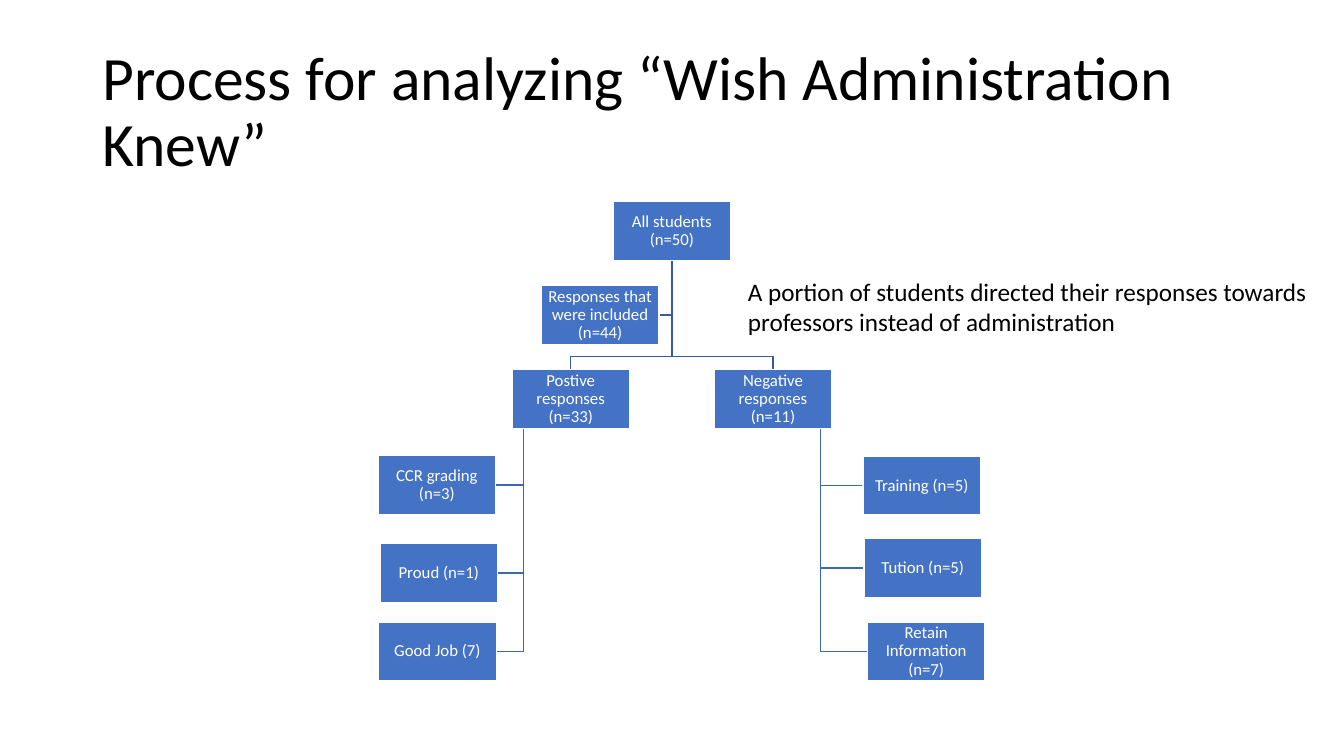
"""Build the slide on analysing the "Wish Administration Knew" responses."""
from pptx import Presentation
from pptx.dml.color import RGBColor
from pptx.enum.shapes import MSO_SHAPE
from pptx.enum.text import MSO_ANCHOR, PP_ALIGN
from pptx.util import Pt

COLORS = {"box": "4472C4", "edge": "FFFFFF", "stem": "365B9D",
          "branch": "3E67B2", "ink": "000000", "paper": "FFFFFF"}
FONT = "Calibri"
BOX_W, BOX_H = 84.2, 42.2
RAIL_INSET = BOX_W / 10
DROP = 9.2

ROOT = (437.9, 144, "All students (n=50)")
INCLUDED = (386.6, 204, "Responses that were included (n=44)")
POSITIVE = (365.6, 264, "Postive responses (n=33)")
NEGATIVE = (510.1, 264, "Negative responses (n=11)")
POSITIVE_THEMES = [(270, 325.4, "CCR grading (n=3)"),
                   (271.4, 388.1, "Proud (n=1)"),
                   (270.4, 444.2, "Good Job (7)")]
NEGATIVE_THEMES = [(616.4, 325.8, "Training (n=5)"),
                   (617.1, 384.7, "Tution (n=5)"),
                   (619.5, 444.2, "Retain Information (n=7)")]


class SlideBuilder:
    def __init__(self, slide):
        self.slide = slide

    def color(self, name):
        return RGBColor.from_string(COLORS[name])

    def add_words(self, sp, text, size, color, spacing=None,
                  align=PP_ALIGN.LEFT, anchor=MSO_ANCHOR.TOP):
        tf = sp.text_frame
        tf.word_wrap = True
        tf.vertical_anchor = anchor
        p = tf.paragraphs[0]
        p.alignment = align
        p.line_spacing = spacing
        r = p.add_run()
        r.text = text
        r.font.name = FONT
        r.font.size = Pt(size)
        r.font.color.rgb = self.color(color)
        return tf

    def text(self, x, y, w, h, text, size, **style):
        sp = self.slide.shapes.add_textbox(Pt(x), Pt(y), Pt(w), Pt(h))
        self.add_words(sp, text, size, "ink", **style)

    def box(self, x, y, text):
        sp = self.slide.shapes.add_shape(MSO_SHAPE.RECTANGLE, Pt(x), Pt(y),
                                         Pt(BOX_W), Pt(BOX_H))
        sp.shadow.inherit = False
        sp.fill.solid()
        sp.fill.fore_color.rgb = self.color("box")
        sp.line.color.rgb = self.color("edge")
        sp.line.width = Pt(1)
        tf = self.add_words(sp, text, 12, "paper", 0.9, PP_ALIGN.CENTER,
                            MSO_ANCHOR.MIDDLE)
        tf.margin_left = tf.margin_right = Pt(0.6)
        tf.margin_top = tf.margin_bottom = Pt(0.6)

    def elbow(self, points, color):
        start, *rest = [(Pt(x), Pt(y)) for x, y in points]
        builder = self.slide.shapes.build_freeform(*start)
        builder.add_line_segments(rest, close=False)
        sp = builder.convert_to_shape()
        sp.shadow.inherit = False
        sp.fill.background()
        sp.line.color.rgb = self.color(color)
        sp.line.width = Pt(1)

    def branches(self, rail_x, parent, themes, side):
        for x, y, _ in themes:
            mid = y + BOX_H / 2
            self.elbow([(rail_x, parent[1] + BOX_H), (rail_x, mid),
                        (x + side, mid)], "branch")


def main():
    prs = Presentation()
    prs.slide_width, prs.slide_height = Pt(960), Pt(540)
    s = SlideBuilder(prs.slides.add_slide(prs.slide_layouts[6]))

    s.text(66, 28.8, 828, 104.4,
           "Process for analyzing “Wish Administration Knew”", 44,
           spacing=0.9, anchor=MSO_ANCHOR.MIDDLE)

    stem_x, stem_y = ROOT[0] + BOX_W / 2, ROOT[1] + BOX_H
    mid = INCLUDED[1] + BOX_H / 2
    s.elbow([(stem_x, stem_y), (stem_x, mid), (INCLUDED[0] + BOX_W, mid)],
            "stem")
    for x, y, _ in (POSITIVE, NEGATIVE):
        center = x + BOX_W / 2
        s.elbow([(stem_x, stem_y), (stem_x, y - DROP), (center, y - DROP),
                 (center, y)], "stem")
    s.branches(POSITIVE[0] + RAIL_INSET, POSITIVE, POSITIVE_THEMES, BOX_W)
    s.branches(NEGATIVE[0] + BOX_W - RAIL_INSET, NEGATIVE, NEGATIVE_THEMES, 0)

    for node in (ROOT, POSITIVE, *POSITIVE_THEMES, NEGATIVE, *NEGATIVE_THEMES,
                 INCLUDED):
        s.box(*node)

    s.text(527.2, 193.6, 432.8, 50.9,
           "A portion of students directed their responses towards "
           "professors instead of administration", 18)
    prs.save("out.pptx")


if __name__ == "__main__":
    main()
